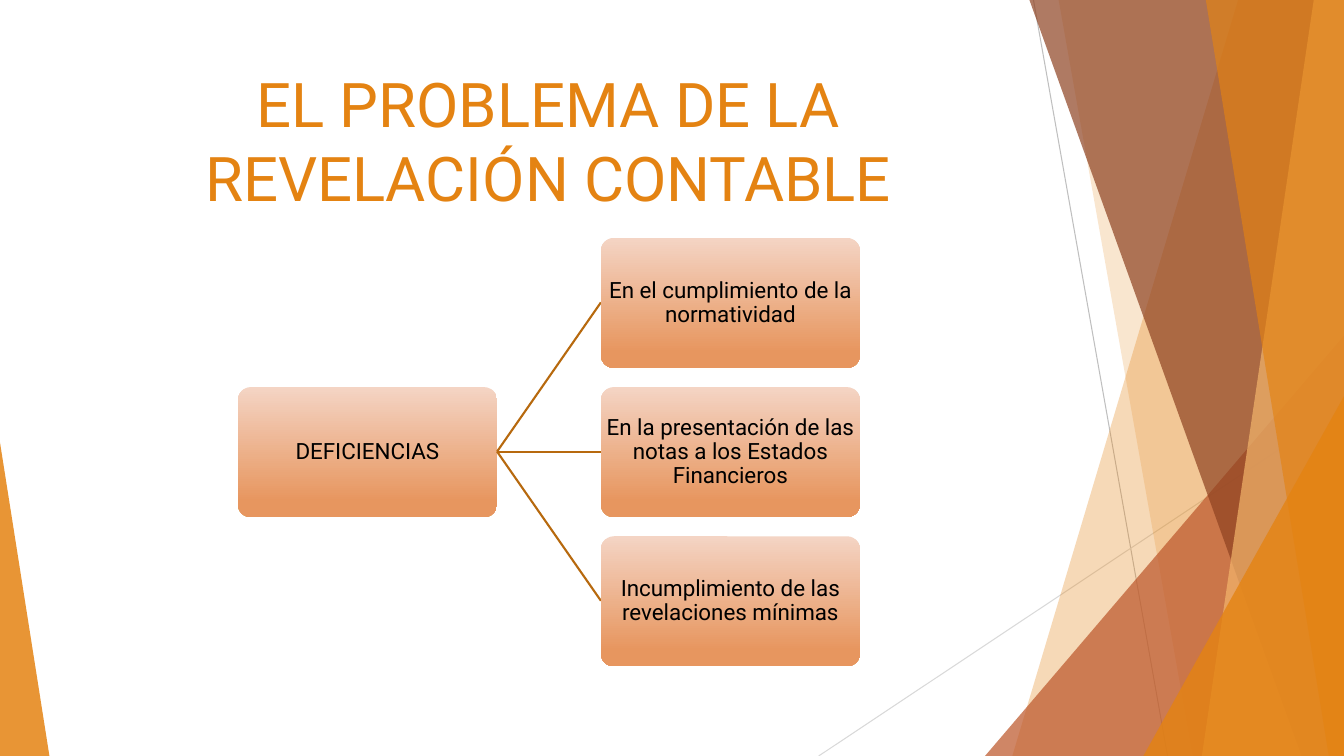
from lxml.etree import SubElement
from pptx import Presentation
from pptx.dml.color import RGBColor
from pptx.enum.shapes import MSO_CONNECTOR, MSO_SHAPE
from pptx.enum.text import MSO_ANCHOR, PP_ALIGN
from pptx.oxml.ns import qn
from pptx.util import Pt

PX = 9144
WIDTH, HEIGHT = 1333, 750
FONT = "Roboto"
COLORS = {
    "orange": "E48312",
    "light_orange": "F3B56C",
    "rust": "BD582C",
    "brown": "8E4221",
    "gray": "BFBFBF",
    "light_gray": "D9D9D9",
    "link": "B7690E",
    "box_top": "F4D4C4",
    "box_bottom": "E7965F",
    "text": "000000",
}
BOX_WIDTH, BOX_HEIGHT = 257, 129
ROOT_LEFT, BRANCH_LEFT = 236, 596
BRANCH_TOP, BRANCH_STEP = 236, 148
ROOT_TEXT = "DEFICIENCIAS"
BRANCH_TEXTS = [
    "En el cumplimiento de la normatividad",
    "En la presentación de las notas a los Estados Financieros",
    "Incumplimiento de las revelaciones mínimas",
]


def color(name):
    """Return the named colour."""
    return RGBColor.from_string(COLORS[name])


def emu(*lengths):
    """Turn px lengths into EMU."""
    return [length * PX for length in lengths]


def write(frame, text, size, ink="text", spacing=None):
    """Put centred text in a frame."""
    frame.word_wrap = True
    frame.vertical_anchor = MSO_ANCHOR.MIDDLE
    para = frame.paragraphs[0]
    para.alignment = PP_ALIGN.CENTER
    para.line_spacing = spacing
    span = para.add_run()
    span.text = text
    span.font.name = FONT
    span.font.size = Pt(size)
    span.font.color.rgb = color(ink)


def paint(shape, fill, opacity):
    """Give a shape a translucent fill without outline or shadow."""
    shape.shadow.inherit = False
    shape.line.fill.background()
    shape.fill.solid()
    shape.fill.fore_color.rgb = color(fill)
    tint = shape.fill._xPr.find(f"{qn('a:solidFill')}/{qn('a:srgbClr')}")
    SubElement(tint, qn("a:alpha"), val=str(opacity * 1000))


def add_band(page, top_left, top_right, bottom_right, bottom_left, fill, opacity):
    """Draw a four-sided band over the full slide height."""
    builder = page.shapes.build_freeform(top_left, 0, scale=PX)
    builder.add_line_segments(
        [(top_right, 0), (bottom_right, HEIGHT), (bottom_left, HEIGHT)]
    )
    paint(builder.convert_to_shape(), fill, opacity)


def add_corner(page, left, top, width, apex, fill, opacity):
    """Draw a right triangle standing on the bottom edge."""
    shape = page.shapes.add_shape(
        MSO_SHAPE.ISOSCELES_TRIANGLE, *emu(left, top, width, HEIGHT - top)
    )
    shape.adjustments[0] = apex
    paint(shape, fill, opacity)


def add_line(page, start, end, ink, weight):
    """Draw a straight line between two points."""
    line = page.shapes.add_connector(MSO_CONNECTOR.STRAIGHT, *emu(*start, *end))
    line.line.color.rgb = color(ink)
    line.line.width = Pt(weight)
    SubElement(line._element.spPr, qn("a:effectLst"))


def add_box(page, left, top, text):
    """Draw a rounded gradient box with its text."""
    box = page.shapes.add_shape(
        MSO_SHAPE.ROUNDED_RECTANGLE, *emu(left, top, BOX_WIDTH, BOX_HEIGHT)
    )
    box.adjustments[0] = 0.1
    box.shadow.inherit = False
    box.line.fill.background()
    box.fill.gradient()
    box.fill.gradient_angle = 270
    stops = [("box_top", 0), ("box_bottom", 0.88)]
    for stop, (name, position) in zip(box.fill.gradient_stops, stops):
        stop.color.rgb = color(name)
        stop.position = position
    frame = box.text_frame
    frame.margin_left = frame.margin_right = PX
    frame.margin_top = frame.margin_bottom = PX
    write(frame, text, 16, spacing=0.9)


def add_background(page):
    """Draw the lines, bands and corners at the slide edges."""
    add_line(page, (1025, 0), (1158, HEIGHT), "gray", 0.75)
    add_line(page, (WIDTH, 403), (812, HEIGHT), "light_gray", 0.75)
    add_band(page, 1228, WIDTH, WIDTH, 1004, "orange", 30)
    add_band(page, 1050, WIDTH, WIDTH, 1183, "orange", 20)
    add_corner(page, 977, 333, 356, 1, "rust", 72)
    add_band(page, 1021, WIDTH, WIDTH, 1291, "brown", 70)
    add_band(page, 1303, WIDTH, WIDTH, 1192, "light_orange", 70)
    add_band(page, 1196, WIDTH, WIDTH, 1318, "orange", 65)
    add_corner(page, 1134, 393, 199, 1, "orange", 80)
    add_corner(page, 0, 439, 49, 0, "orange", 85)


def add_title(page, text):
    """Place and fill the title placeholder."""
    title = page.shapes.title
    title.left, title.top, title.width, title.height = emu(74, 67, 940, 144)
    write(title.text_frame, text, 44, ink="orange")


def add_tree(page):
    """Draw the root box, its branches and the links between them."""
    root_top = BRANCH_TOP + BRANCH_STEP
    link_start = (ROOT_LEFT + BOX_WIDTH, root_top + BOX_HEIGHT // 2)
    add_box(page, ROOT_LEFT, root_top, ROOT_TEXT)
    for index, text in enumerate(BRANCH_TEXTS):
        top = BRANCH_TOP + index * BRANCH_STEP
        link_end = (BRANCH_LEFT, top + BOX_HEIGHT // 2)
        add_line(page, link_start, link_end, "link", 1.5)
        add_box(page, BRANCH_LEFT, top, text)


def main():
    """Build and save the slide."""
    deck = Presentation()
    deck.slide_width, deck.slide_height = emu(WIDTH, HEIGHT)
    page = deck.slides.add_slide(deck.slide_layouts[5])
    add_background(page)
    add_title(page, "EL PROBLEMA DE LA REVELACIÓN CONTABLE")
    add_tree(page)
    deck.save("out.pptx")


if __name__ == "__main__":
    main()
